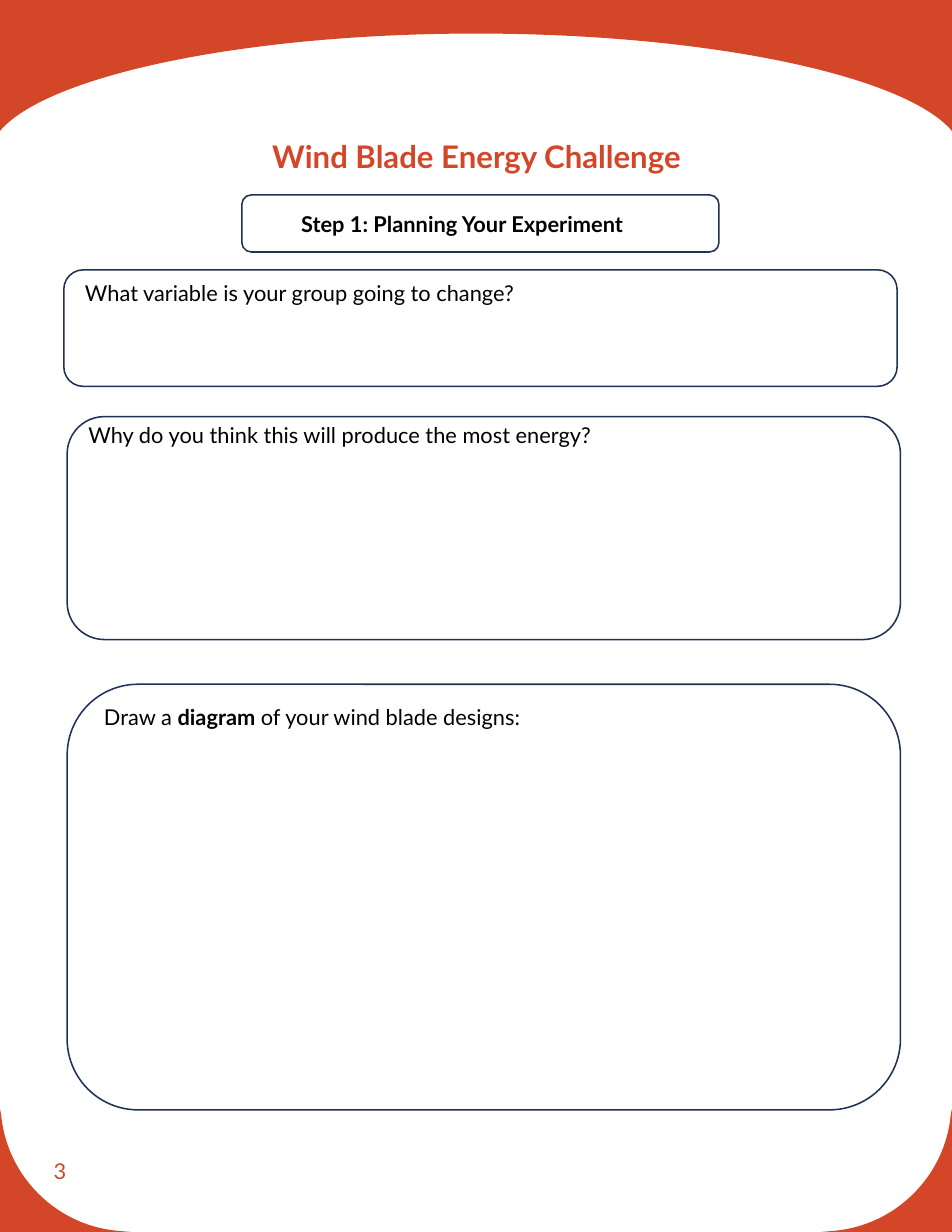
import lxml.etree
import pptx
import pptx.dml.color
import pptx.enum.shapes
import pptx.enum.text
import pptx.oxml.ns
import pptx.util

ORANGE = pptx.dml.color.RGBColor(0xD3, 0x47, 0x28)
NAVY = pptx.dml.color.RGBColor(0x1E, 0x32, 0x56)
BLACK = pptx.dml.color.RGBColor(0, 0, 0)
WHITE = pptx.dml.color.RGBColor(255, 255, 255)
FONT = "Lato"
WIDTH, HEIGHT = 8.5, 11
Inches = pptx.util.Inches
ANCHOR = pptx.enum.text.MSO_ANCHOR


def draw_band(points, curve_starts):
    """Draw a filled outline; three points from each curve start form one Bezier curve."""
    corners = [(Inches(x), Inches(y)) for x, y in points]
    builder = slide.shapes.build_freeform(*corners[0], scale=1.0)
    builder.add_line_segments(corners[1:], close=True)
    band = builder.convert_to_shape()
    band.shadow.inherit = False
    band.fill.solid()
    band.fill.fore_color.rgb = ORANGE
    band.line.fill.background()
    # Merge the three segments of each curve
    segments = band._element.xpath(".//a:path/*")
    for start in curve_starts:
        bezier = lxml.etree.Element(pptx.oxml.ns.qn("a:cubicBezTo"))
        segments[start].addprevious(bezier)
        for segment in segments[start:start + 3]:
            bezier.append(segment[0])
            segment.getparent().remove(segment)


def write(frame, runs, size, color, anchor=ANCHOR.TOP, wrap=True):
    """Fill a text frame with (text, bold) runs."""
    frame.word_wrap = wrap
    frame.auto_size = pptx.enum.text.MSO_AUTO_SIZE.NONE
    frame.vertical_anchor = anchor
    for text, bold in runs:
        run = frame.paragraphs[0].add_run()
        run.text = text
        run.font.name = FONT
        run.font.size = pptx.util.Pt(size)
        run.font.bold = bold
        run.font.color.rgb = color


deck = pptx.Presentation()
deck.slide_width, deck.slide_height = Inches(WIDTH), Inches(HEIGHT)
slide = deck.slides.add_slide(deck.slide_layouts[5])
slide.background.fill.solid()
slide.background.fill.fore_color.rgb = WHITE

# Orange page frame: arched header and two mirrored bottom corners
header = [(0, 0), (WIDTH, 0), (WIDTH, 1.18), (WIDTH, 1.17),
          (8.09, 0.68), (6.34, 0.3), (WIDTH / 2, 0.3),
          (2.16, 0.3), (0.41, 0.68), (0, 1.17), (0, 1.18)]
left_corner = [(0, 9.9), (0.01, 9.95), (0.06, 10.5), (0.5, 10.94), (1.05, 10.99),
               (1.17, HEIGHT), (0, HEIGHT)]
right_corner = [(WIDTH - x, y) for x, y in left_corner]
draw_band(header, [4, 7])
draw_band(left_corner, [2])
draw_band(right_corner, [2])

# Page number
page_number = slide.shapes.add_textbox(*map(Inches, (0.38, 10.16, 1.91, 0.59)))
write(page_number.text_frame, [("3", False)], 14, ORANGE, ANCHOR.MIDDLE)

# Title
title = slide.shapes.title
title.left, title.top, title.width, title.height = map(Inches, (0.36, 1.08, 7.79, 0.86))
write(title.text_frame, [("Wind Blade Energy Challenge", True)], 20, ORANGE)
title.text_frame.paragraphs[0].alignment = pptx.enum.text.PP_ALIGN.CENTER
title.text_frame.paragraphs[0].line_spacing = 1.3

# Worksheet panels: frame, filled or not, prompt box, wrapping, prompt runs
panels = [
    ((0.6, 3.72, 7.44, 1.99), True, (0.69, 3.72, 7.26, 0.62), True,
     [("Why do you think this will produce the most energy?", False)]),
    ((0.57, 2.41, 7.44, 1.04), False, (0.66, 2.45, 4.56, 0.34), False,
     [("What variable is your group going to change?", False)]),
    ((2.16, 1.74, 4.26, 0.51), False, (2.59, 1.83, 4.13, 0.34), True,
     [("Step 1: Planning Your Experiment", True)]),
    ((0.6, 6.11, 7.44, 3.8), False, (0.83, 6.23, 4.43, 0.34), False,
     [("Draw a ", False), ("diagram ", True), ("of your wind blade designs:", False)]),
]
for frame_place, filled, prompt_place, wrap, runs in panels:
    panel = slide.shapes.add_shape(pptx.enum.shapes.MSO_SHAPE.ROUNDED_RECTANGLE,
                                   *map(Inches, frame_place))
    panel.shadow.inherit = False
    if filled:
        panel.fill.solid()
        panel.fill.fore_color.rgb = WHITE
    else:
        panel.fill.background()
    panel.line.color.rgb = NAVY
    panel.line.width = pptx.util.Pt(1)
    prompt = slide.shapes.add_textbox(*map(Inches, prompt_place))
    write(prompt.text_frame, runs, 14, BLACK, wrap=wrap)

deck.save("out.pptx")
